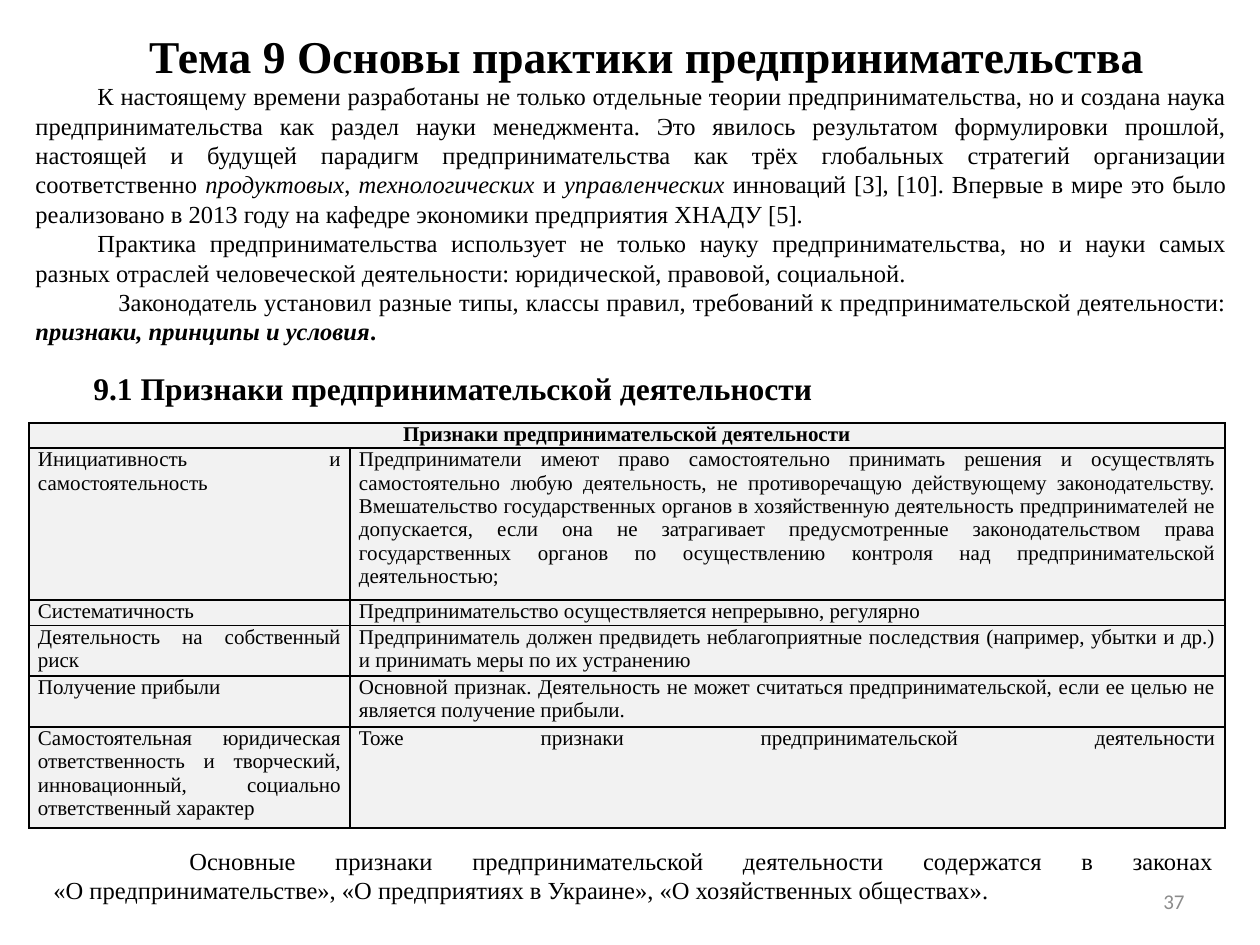
"""Build the slide on the basics of entrepreneurial practice."""
from lxml.etree import SubElement
from pptx import Presentation
from pptx.dml.color import RGBColor
from pptx.enum.text import MSO_ANCHOR, MSO_AUTO_SIZE, PP_ALIGN
from pptx.oxml import parse_xml
from pptx.oxml.ns import nsdecls, qn
from pptx.util import Inches, Pt

HUES = {"ink": "000000", "cell": "F2F2F2", "page": "8C8C8C"}
SERIF = "Times New Roman"
ALIGN = {"l": PP_ALIGN.LEFT, "c": PP_ALIGN.CENTER,
         "r": PP_ALIGN.RIGHT, "j": PP_ALIGN.JUSTIFY}

TITLE = "Тема 9 Основы практики предпринимательства"
BODY = [
    (62, [
        ("К настоящему времени разработаны не только отдельные теории "
         "предпринимательства, но и создана наука предпринимательства как "
         "раздел науки менеджмента. Это явилось результатом формулировки "
         "прошлой, настоящей и будущей парадигм предпринимательства как трёх "
         "глобальных стратегий организации соответственно ", ""),
        ("продуктовых", "i"), (", ", ""), ("технологических", "i"),
        (" и ", ""), ("управленческих", "i"),
        (" инноваций [3], [10]. Впервые в мире это было реализовано в 2013 "
         "году на кафедре экономики предприятия ХНАДУ [5].", "")]),
    (62, [
        ("Практика предпринимательства использует не только науку "
         "предпринимательства, но и науки самых разных отраслей человеческой "
         "деятельности: юридической, правовой, социальной.", "")]),
    (83, [
        ("Законодатель установил разные типы, классы правил, требований к "
         "предпринимательской деятельности: ", ""),
        ("признаки, принципы и условия", "bi"), (".", "b")]),
]
SECTION = "9.1 Признаки предпринимательской деятельности"
HEAD = "Признаки предпринимательской деятельности"
SIGNS = [
    ("Инициативность и самостоятельность",
     "Предприниматели имеют право самостоятельно принимать решения и "
     "осуществлять самостоятельно любую деятельность, не противоречащую "
     "действующему законодательству. Вмешательство государственных органов в "
     "хозяйственную деятельность предпринимателей не допускается, если она не "
     "затрагивает предусмотренные законодательством права государственных "
     "органов по осуществлению контроля над предпринимательской "
     "деятельностью;"),
    ("Систематичность",
     "Предпринимательство осуществляется непрерывно, регулярно"),
    ("Деятельность на собственный риск",
     "Предприниматель должен предвидеть неблагоприятные последствия "
     "(например, убытки и др.) и принимать меры по их устранению"),
    ("Получение прибыли",
     "Основной признак. Деятельность не может считаться предпринимательской, "
     "если ее целью не является получение прибыли."),
    ("Самостоятельная юридическая ответственность и творческий, "
     "инновационный, социально ответственный характер",
     "Тоже признаки предпринимательской деятельности\n"),
]
COLS = [321, 875]
ROWS = [25, 152, 25, 50, 51, 101]
CLOSE = ("Основные признаки предпринимательской деятельности содержатся в "
         "законах\n«О предпринимательстве», «О предприятиях в Украине», "
         "«О хозяйственных обществах».")
PAGE = "37"


def px(num):
    return int(Inches(num) / 126)


def write(frame, text, size=14, font=SERIF, hue="ink", align="j",
          indent=0, style=""):
    """Fill a frame with a string or a list of (indent, runs)."""
    paras = [(indent, [(text, style)])] if isinstance(text, str) else text
    for num, (first, runs) in enumerate(paras):
        para = frame.add_paragraph() if num else frame.paragraphs[0]
        para.alignment = ALIGN[align]
        props = para._p.get_or_add_pPr()
        props.set("marL", "0")
        props.set("indent", str(px(first)))
        for words, marks in runs:
            for part, line in enumerate(words.split("\n")):
                if part:
                    para.add_line_break()
                if line:
                    run = para.add_run()
                    run.text = line
                    run.font.name, run.font.size = font, Pt(size)
                    run.font.bold, run.font.italic = "b" in marks, "i" in marks
                    run.font.color.rgb = RGBColor.from_string(HUES[hue])


def place(slide, area, text, anchor=MSO_ANCHOR.TOP, **form):
    frame = slide.shapes.add_textbox(*map(px, area)).text_frame
    frame.word_wrap = True
    frame.vertical_anchor = anchor
    write(frame, text, **form)


def style_cell(cell):
    cell.margin_left = cell.margin_right = px(9)
    cell.margin_top = cell.margin_bottom = 0
    props = cell._tc.get_or_add_tcPr()
    for num, side in enumerate("LRTB"):
        edge = parse_xml(f'<a:ln{side} w="{Pt(1)}" {nsdecls("a")}/>')
        fill = SubElement(edge, qn("a:solidFill"))
        SubElement(fill, qn("a:srgbClr")).set("val", HUES["ink"])
        props.insert(num, edge)
    cell.fill.solid()
    cell.fill.fore_color.rgb = RGBColor.from_string(HUES["cell"])


def add_signs(slide):
    area = map(px, (29, 423, sum(COLS), sum(ROWS)))
    table = slide.shapes.add_table(len(ROWS), len(COLS), *area).table
    table.first_row = table.horz_banding = False
    for col, width in zip(table.columns, COLS):
        col.width = px(width)
    for row, height in zip(table.rows, ROWS):
        row.height = px(height)
    for cell in table.iter_cells():
        style_cell(cell)
    table.cell(0, 0).merge(table.cell(0, 1))
    write(table.cell(0, 0).text_frame, HEAD, size=12, align="c", style="b")
    for row, pair in enumerate(SIGNS, 1):
        for col, text in enumerate(pair):
            write(table.cell(row, col).text_frame, text, size=12)


def main():
    deck = Presentation()
    deck.slide_width, deck.slide_height = px(1260), px(945)
    slide = deck.slides.add_slide(deck.slide_layouts[5])
    title = slide.shapes.title
    title.left, title.top, title.width, title.height = map(
        px, (23, 22, 1216, 66))
    title.text_frame.auto_size = MSO_AUTO_SIZE.NONE
    title.text_frame.vertical_anchor = MSO_ANCHOR.MIDDLE
    write(title.text_frame, TITLE, size=26, align="c", indent=32, style="b")
    place(slide, (23, 75, 1216, 276), BODY)
    add_signs(slide)
    place(slide, (41, 839, 1185, 72), CLOSE, MSO_ANCHOR.MIDDLE, indent=136)
    place(slide, (903, 876, 294, 50), PAGE, MSO_ANCHOR.MIDDLE, size=12,
          font="Calibri", hue="page", align="r")
    place(slide, (81, 363, 946, 50), SECTION, size=18, align="l", style="b")
    deck.save("out.pptx")


if __name__ == "__main__":
    main()
